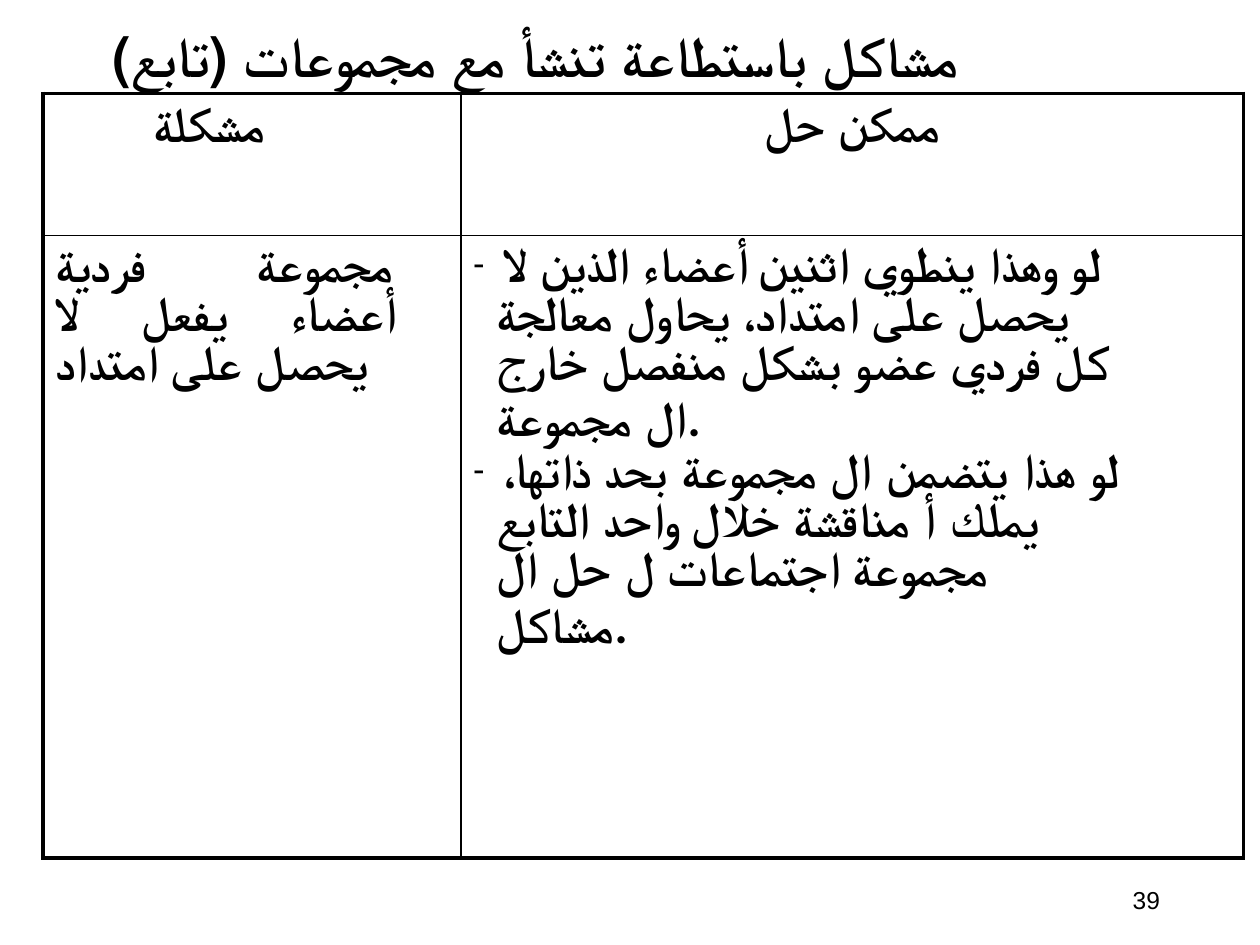
import pptx
import pptx.util
import pptx.dml.color
import pptx.enum.text
import pptx.oxml.ns
from lxml import etree

Inches, Pt = pptx.util.Inches, pptx.util.Pt
ALIGN = pptx.enum.text.PP_ALIGN
BLACK = pptx.dml.color.RGBColor(0, 0, 0)
qn = pptx.oxml.ns.qn

# Content: runs are (text, letter spacing in points)
TITLE = [("مشاكل باستطاعة ", -0.1), ("تنشأ ", 0), ("مع مجموعات (تابع)", -0.1)]
PAGE = [("39", 0)]
PROBLEM_HEAD = [("مشكلة", -0.1)]
SOLUTION_HEAD = [("ممكن حل", -0.1)]
PROBLEM = [("مجموعة فردية أعضاء يفعل لا ", -0.1), ("يحصل ", -0.2), ("على امتداد", -0.1)]
SOLUTIONS = [
    [("لو وهذا ", -0.1), ("ينطوي ", -0.2), ("اثنين أعضاء الذين لا ", -0.1),
     ("يحصل ", -0.2), ("على امتداد، يحاول ", 0), ("معالجة كل فردي عضو ", -0.1),
     ("بشكل منفصل ", -0.2), ("خارج ال مجموعة.", -0.1)],
    [("لو هذا ", -0.1), ("يتضمن ", -0.2), ("ال مجموعة ", -0.1),
     ("بحد ذاتها، يملك ", -0.2),
     ("أ مناقشة خلال واحد التابع مجموعة اجتماعات ل حل ال مشاكل.", -0.1)],
]

# Formats
HEAD = dict(name="Arial", size=Pt(28), bold=True)
BODY = dict(HEAD, name="Calibri")
HEADING = dict(BODY, size=Pt(32))
BULLET_GAP = dict(HEAD, size=Pt(18), bold=False)
FOOTER = dict(name="Arial", size=Pt(14), bold=False)

# Table grid
TABLE_LEFT, TABLE_TOP = 0.34, 0.74
COLUMNS, ROWS = (3.32, 6.21), (1.13, 4.94)
OUTER, INNER = 2.25, 1


def add_run(paragraph, text, spacing, style):
    run = paragraph.add_run()
    run.text = text
    for attribute, value in style.items():
        setattr(run.font, attribute, value)
    run.font.color.rgb = BLACK
    run.font._element.set("spc", str(round(spacing * 100)))


def fill_paragraph(paragraph, runs, style, indent=0, bullet=None, **layout):
    properties = paragraph._p.get_or_add_pPr()
    properties.set("marL", str(Inches(indent)))
    properties.set("indent", str(Inches(-0.18 if bullet else 0)))
    if bullet:
        etree.SubElement(properties, qn("a:buChar"), char=bullet)
        tabs = etree.SubElement(properties, qn("a:tabLst"))
        etree.SubElement(tabs, qn("a:tab"), pos=str(Inches(0.31)), algn="l")
        add_run(paragraph, " ", 0, BULLET_GAP)
    else:
        etree.SubElement(properties, qn("a:buNone"))
    for attribute, value in layout.items():
        setattr(paragraph, attribute, value)
    for text, spacing in runs:
        add_run(paragraph, text, spacing, style)


def add_text(slide, box, runs, style, top_inset=0, **layout):
    frame = slide.shapes.add_textbox(*map(Inches, box)).text_frame
    frame.margin_left = frame.margin_right = frame.margin_bottom = 0
    frame.margin_top = Inches(top_inset)
    frame.word_wrap = True
    fill_paragraph(frame.paragraphs[0], runs, style, **layout)


def set_borders(cell, row, column):
    properties = cell._tc.get_or_add_tcPr()
    outer_edges = {"a:lnL": column == 0, "a:lnR": column == 1,
                   "a:lnT": row == 0, "a:lnB": row == 1}
    for tag, is_outer in outer_edges.items():
        width = Pt(OUTER if is_outer else INNER)
        line = etree.SubElement(properties, qn(tag), w=str(width))
        fill = etree.SubElement(line, qn("a:solidFill"))
        etree.SubElement(fill, qn("a:srgbClr"), val=str(BLACK))


deck = pptx.Presentation()
deck.slide_width, deck.slide_height = Inches(10), Inches(7.5)
slide = deck.slides.add_slide(deck.slide_layouts[6])

# Page number and title
add_text(slide, (8.95, 7.03, 0.3, 0.25), PAGE, FOOTER, indent=0.04, line_spacing=Pt(16.6))
add_text(slide, (0.88, 0.14, 8.27, 0.56), TITLE, HEADING, top_inset=0.03, indent=0.01)

# Problem and solution table
table = slide.shapes.add_table(
    2, 2, Inches(TABLE_LEFT), Inches(TABLE_TOP),
    Inches(sum(COLUMNS)), Inches(sum(ROWS))).table
table.first_row = table.horz_banding = False
for column, width in zip(table.columns, COLUMNS):
    column.width = Inches(width)
for row, height in zip(table.rows, ROWS):
    row.height = Inches(height)

# Each cell: paragraphs, style, top and right margins, paragraph layout
CELLS = [
    [([PROBLEM_HEAD], HEAD, 0.08, 0, dict(indent=0.88)),
     ([SOLUTION_HEAD], HEAD, 0.08, 0, dict(alignment=ALIGN.CENTER))],
    [([PROBLEM], BODY, 0.06, 0.54, dict(indent=0.1, alignment=ALIGN.JUSTIFY)),
     (SOLUTIONS, BODY, 0.06, 0.96, dict(indent=0.28, bullet="-"))],
]
for r, cells in enumerate(CELLS):
    for c, (paragraphs, style, top, right, layout) in enumerate(cells):
        cell = table.cell(r, c)
        cell.margin_left = cell.margin_bottom = 0
        cell.margin_top, cell.margin_right = Inches(top), Inches(right)
        set_borders(cell, r, c)
        cell.fill.background()
        frame = cell.text_frame
        for i, runs in enumerate(paragraphs):
            paragraph = frame.add_paragraph() if i else frame.paragraphs[0]
            fill_paragraph(paragraph, runs, style, **layout)

deck.save("out.pptx")
